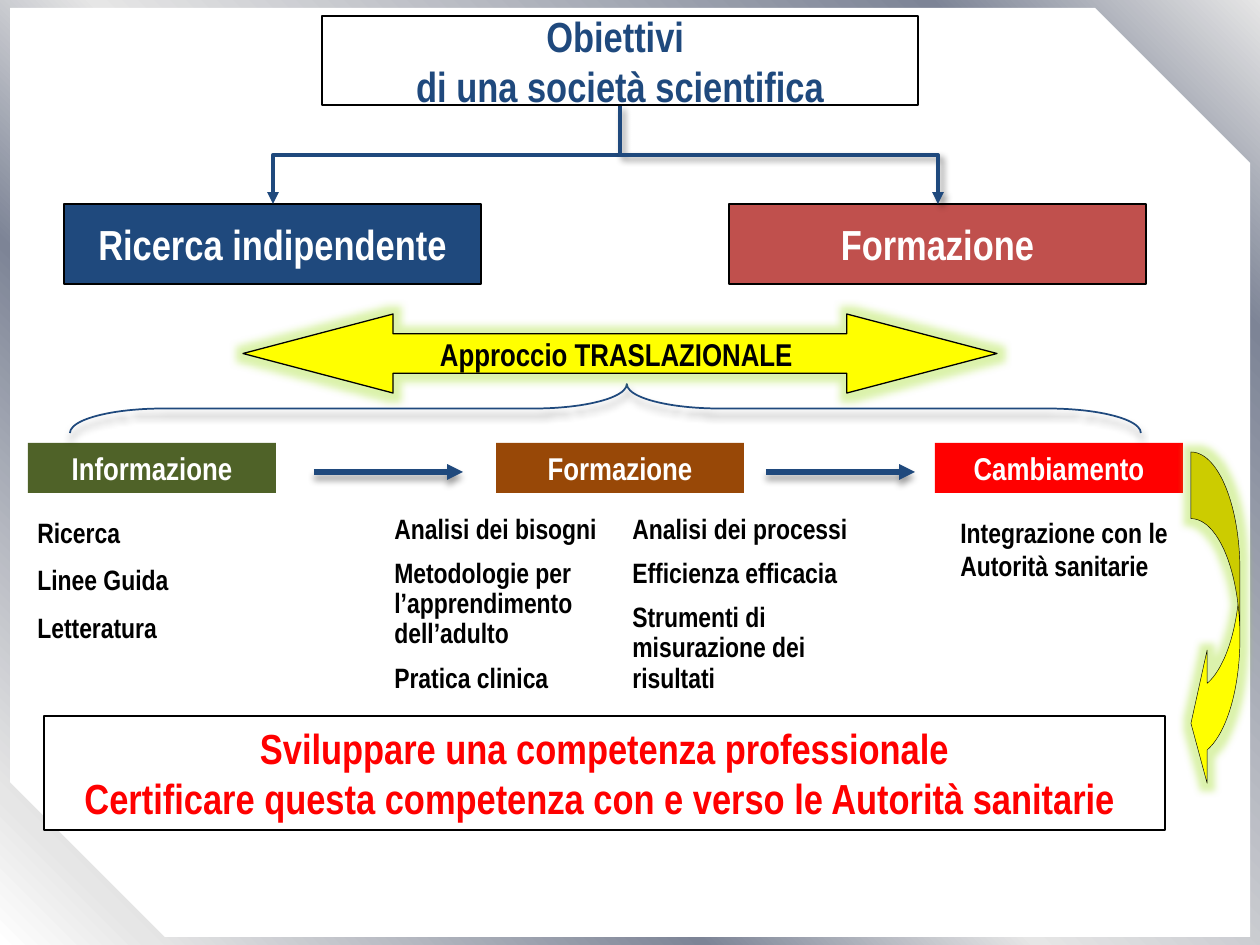
from dataclasses import dataclass
from typing import Optional

from lxml import etree
from pptx import Presentation
from pptx import util as u
from pptx.dml.color import RGBColor
from pptx.enum import shapes, text
from pptx.oxml import parse_xml
from pptx.oxml.ns import nsdecls, qn

PX = 914400 / 126
FONT = "Arial Narrow"

BLACK = RGBColor(0, 0, 0)
WHITE = RGBColor(255, 255, 255)
NAVY = RGBColor(0x1F, 0x49, 0x7D)
BRICK = RGBColor(0xC0, 0x50, 0x4D)
OLIVE = RGBColor(0x4F, 0x62, 0x28)
BROWN = RGBColor(0x98, 0x48, 0x07)
RED = RGBColor(255, 0, 0)
YELLOW = RGBColor(255, 255, 0)
GLOW = RGBColor(0xA6, 0xE0, 0x2F)
PALE = RGBColor(0xE6, 0xE6, 0xE6)
SLATE = RGBColor(0x7D, 0x84, 0x96)
STOPS = [(0, WHITE), (7, PALE), (32, SLATE), (47, PALE), (85, SLATE), (100, PALE)]

KIND = shapes.MSO_SHAPE
LINK = shapes.MSO_CONNECTOR
MID = text.MSO_ANCHOR.MIDDLE


@dataclass
class Box:
    """A framed box whose text stays on its own lines."""
    x: int
    y: int
    w: int
    h: int
    lines: list[str]
    ink: RGBColor
    fill: Optional[RGBColor] = None
    size: int = 24
    kind: KIND = KIND.RECTANGLE


@dataclass
class Label:
    x: int
    word: str
    fill: RGBColor


@dataclass
class Note:
    x: int
    w: int
    h: int
    lines: list[str]
    lead: Optional[float] = None


def px(n: float) -> int:
    return u.Emu(round(n * PX))


def add_effect(shape, name: str, color: RGBColor, **attrs) -> None:
    """Give a shape one translucent effect."""
    bag = shape._element.spPr.find(qn("a:effectLst"))
    tag = etree.SubElement(bag, qn(f"a:{name}"), {k: str(v) for k, v in attrs.items()})
    tint = etree.SubElement(tag, qn("a:srgbClr"), val=str(color))
    etree.SubElement(tint, qn("a:alpha"), val="40000")


def add_shadow(shape, angle: int) -> None:
    add_effect(shape, "outerShdw", BLACK, blurRad=50800, dist=38100,
               dir=angle * 60000, algn="ctr", rotWithShape=0)


def add_glow(shape) -> None:
    add_effect(shape, "glow", GLOW, rad=101600)


def add_form(slide, kind, x, y, w, h, fill=None, line=None, width=0.75):
    shape = slide.shapes.add_shape(kind, px(x), px(y), px(w), px(h))
    shape.shadow.inherit = False
    if fill is None:
        shape.fill.background()
    else:
        shape.fill.solid()
        shape.fill.fore_color.rgb = fill
    if line is None:
        shape.line.fill.background()
    else:
        shape.line.color.rgb = line
        shape.line.width = u.Pt(width)
    return shape


def put_text(shape, lines: list[str], *, size: int, ink: RGBColor = BLACK,
             align=text.PP_ALIGN.CENTER, anchor=text.MSO_ANCHOR.TOP,
             wrap: bool = True, gap: int = 0, lead: Optional[float] = None) -> None:
    frame = shape.text_frame
    frame.word_wrap = wrap
    frame.vertical_anchor = anchor
    for i, line in enumerate(lines):
        para = frame.add_paragraph() if i else frame.paragraphs[0]
        para.text = line
        para.alignment = align
        if i and gap:
            para.space_before = u.Pt(gap)
        if lead:
            para.line_spacing = lead
        para.font.name, para.font.size, para.font.bold = FONT, u.Pt(size), True
        para.font.color.rgb = ink


def draw_box(slide, box: Box):
    shape = add_form(slide, box.kind, box.x, box.y, box.w, box.h, box.fill, BLACK)
    put_text(shape, box.lines, size=box.size, ink=box.ink, anchor=MID, wrap=False)
    return shape


def draw_label(slide, label: Label) -> None:
    shape = add_form(slide, KIND.RECTANGLE, label.x, 443, 248, 50, label.fill)
    put_text(shape, [label.word], size=18, ink=WHITE)


def draw_note(slide, note: Note) -> None:
    shape = slide.shapes.add_textbox(px(note.x), px(509), px(note.w), px(note.h))
    put_text(shape, note.lines, size=16, align=text.PP_ALIGN.LEFT, gap=8, lead=note.lead)


def add_arrow(slide, kind, x1, y1, x2, y2, width: float):
    link = slide.shapes.add_connector(kind, px(x1), px(y1), px(x2), px(y2))
    link.line.color.rgb = NAVY
    link.line.width = u.Pt(width)
    etree.SubElement(link.line._get_or_add_ln(), qn("a:tailEnd"), type="triangle")
    etree.SubElement(link._element.spPr, qn("a:effectLst"))
    return link


def add_elbow(slide, x1, y1, x2, y2):
    """Bent arrow that leaves downwards: a turned frame about the midpoint."""
    midx, midy = (x1 + x2) / 2, (y1 + y2) / 2
    dx, dy = (y2 - y1) / 2, abs(x2 - x1) / 2
    right = x2 > x1
    if right:
        dx = -dx
    link = add_arrow(slide, LINK.ELBOW, midx - dx, midy - dy, midx + dx, midy + dy, 2.25)
    link._element.spPr.find(qn("a:xfrm")).set("rot", str((270 if right else 90) * 60000))
    return link


def set_back(slide) -> None:
    stops = "".join(f'<a:gs pos="{pos * 1000}"><a:srgbClr val="{color}"/></a:gs>'
                    for pos, color in STOPS)
    grad = parse_xml(f'<a:gradFill {nsdecls("a")} rotWithShape="1"><a:gsLst>{stops}</a:gsLst>'
                     f'<a:lin ang="{315 * 60000}" scaled="0"/></a:gradFill>')
    fill = slide.background.fill
    fill.solid()
    old = slide._element.cSld.find(".//" + qn("a:solidFill"))
    old.getparent().replace(old, grad)


TITLE = Box(322, 16, 596, 89, ["Obiettivi ", "di una società scientifica"], NAVY)
GOALS = [
    Box(64, 204, 417, 80, ["Ricerca indipendente"], WHITE, NAVY),
    Box(729, 204, 417, 80, ["Formazione"], WHITE, BRICK),
]
LABELS = [
    Label(28, "Informazione", OLIVE),
    Label(496, "Formazione", BROWN),
    Label(935, "Cambiamento", RED),
]
NOTES = [
    Note(25, 189, 147, ["Ricerca", "Linee Guida", "Letteratura"]),
    Note(382, 277, 198, ["Analisi dei bisogni",
                         "Metodologie per l’apprendimento dell’adulto",
                         "Pratica clinica"], 0.9),
    Note(620, 268, 198, ["Analisi dei processi", "Efficienza efficacia",
                         "Strumenti di misurazione dei risultati"], 0.9),
    Note(948, 297, 81, ["Integrazione con le Autorità sanitarie"]),
]
RESULT = Box(44, 716, 1121, 114, [
    "Sviluppare una competenza professionale",
    "Certificare questa competenza con e verso le Autorità sanitarie "], RED, WHITE)
BRIDGE = Box(243, 314, 754, 79, ["Approccio TRASLAZIONALE "], BLACK, YELLOW, 18,
             KIND.LEFT_RIGHT_ARROW)


def main() -> None:
    deck = Presentation()
    deck.slide_width, deck.slide_height = px(1260), px(945)
    slide = deck.slides.add_slide(deck.slide_layouts[6])

    # Background and white panel
    set_back(slide)
    add_form(slide, KIND.SNIP_2_DIAG_RECTANGLE, 10, 8, 1240, 929, WHITE)

    # Title and the two goals under it
    draw_box(slide, TITLE)
    for goal in GOALS:
        draw_box(slide, goal)
    add_elbow(slide, 620, 106, 273, 204)
    add_shadow(add_elbow(slide, 620, 106, 938, 204), 45)

    # Three steps with their notes
    for label in LABELS:
        draw_label(slide, label)
    for note in NOTES:
        draw_note(slide, note)
    for x in (314, 766):
        add_shadow(add_arrow(slide, LINK.STRAIGHT, x, 472, x + 149, 472, 3), 90)

    # Brace over the steps
    brace = add_form(slide, KIND.RIGHT_BRACE, 581, -127, 49, 1071, line=NAVY, width=1)
    brace.rotation = 270
    brace.adjustments[0], brace.adjustments[1] = 1.9, 0.52
    add_shadow(brace, 90)

    # Result and yellow arrows
    draw_box(slide, RESULT)
    bridge = draw_box(slide, BRIDGE)
    bridge.adjustments[0], bridge.adjustments[1] = 0.5, 1.9
    add_glow(bridge)
    turn = add_form(slide, KIND.CURVED_LEFT_ARROW, 1191, 452, 49, 338, YELLOW, BLACK, 0.25)
    for i, value in enumerate((1.36, 2.72, 0.33)):
        turn.adjustments[i] = value
    add_glow(turn)

    deck.save("out.pptx")


if __name__ == "__main__":
    main()
